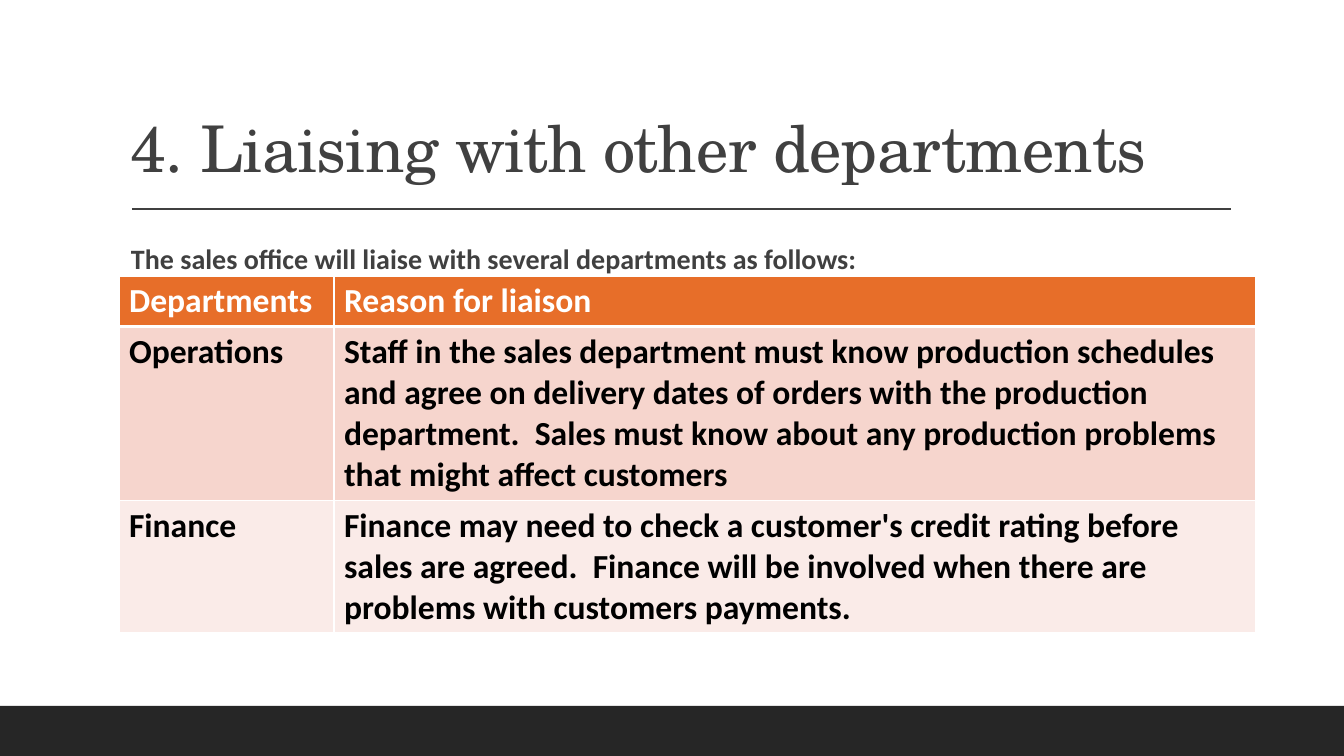
import pptx
import pptx.util
import pptx.dml.color
import pptx.enum.shapes
import pptx.enum.text
import pptx.oxml
import pptx.oxml.ns

FONT = "Calibri"
ROWS = [
    ("Departments", "Reason for liaison"),
    ("Operations", "Staff in the sales department must know production schedules and agree on "
     "delivery dates of orders with the production department.  Sales must know about any "
     "production problems that might affect customers"),
    ("Finance", "Finance may need to check a customer's credit rating before sales are agreed.  "
     "Finance will be involved when there are problems with customers payments."),
]
ROW_HEIGHTS = [50, 174, 132]
ROW_FILLS = ["E76E29", "F6D5CD", "FAEBE8"]
ROW_COLORS = ["FFFFFF", "000000", "000000"]
LABEL_WIDTH = 215


def px(n):
    return pptx.util.Emu(round(n * 914400 / 100.8))


def rgb(value):
    return pptx.dml.color.RGBColor.from_string(value)


def set_font(p, name, size, color, bold=False):
    p.font.name = name
    p.font.size = pptx.util.Pt(size)
    p.font.bold = bold
    p.font.color.rgb = rgb(color)


def add_text(s, box, text):
    tf = s.shapes.add_textbox(*map(px, box)).text_frame
    tf.word_wrap = True
    p = tf.paragraphs[0]
    p.text = text
    return tf, p


def add_footer(s, box):
    sp = s.shapes.add_shape(pptx.enum.shapes.MSO_SHAPE.RECTANGLE, *map(px, box))
    sp.shadow.inherit = False
    sp.fill.solid()
    sp.fill.fore_color.rgb = rgb("262626")
    sp.line.fill.background()


def add_title(s, box, text):
    x, y, w, h = box
    tf, p = add_text(s, box, text)
    tf.vertical_anchor = pptx.enum.text.MSO_ANCHOR.BOTTOM
    p.line_spacing = 0.9
    set_font(p, "TeX Gyre Schola", 46, "404040")
    p.runs[0].font._element.set("spc", "-50")
    rule_y = px(y + h + 18)
    line = s.shapes.add_connector(
        pptx.enum.shapes.MSO_CONNECTOR.STRAIGHT, px(x + 11), rule_y, px(x + w + 1), rule_y)
    line.line.color.rgb = rgb("404040")
    line.line.width = pptx.util.Pt(1)
    line._element.spPr.append(pptx.oxml.parse_xml(
        "<a:effectLst %s/>" % pptx.oxml.ns.nsdecls("a")))


def add_intro(s, box, text):
    tf, p = add_text(s, box, text)
    tf.margin_left = tf.margin_right = 0
    p.line_spacing = 1.1
    set_font(p, FONT, 20, "404040", True)


def set_borders(cell, top, bottom):
    tcPr = cell._tc.get_or_add_tcPr()
    sides = [("L", 1), ("R", 1), ("T", top), ("B", bottom)]
    for i, (side, width) in enumerate(sides):
        tcPr.insert(i, pptx.oxml.parse_xml(
            '<a:ln%s %s w="%d"><a:solidFill><a:srgbClr val="FFFFFF"/></a:solidFill></a:ln%s>'
            % (side, pptx.oxml.ns.nsdecls("a"), pptx.util.Pt(width), side)))


def add_departments(s, box):
    table = s.shapes.add_table(len(ROWS), 2, *map(px, box)).table
    table.columns[0].width = px(LABEL_WIDTH)
    table.columns[1].width = px(box[2] - LABEL_WIDTH)
    for i, texts in enumerate(ROWS):
        table.rows[i].height = px(ROW_HEIGHTS[i])
        for j, text in enumerate(texts):
            cell = table.cell(i, j)
            cell.text = text
            cell.fill.solid()
            cell.fill.fore_color.rgb = rgb(ROW_FILLS[i])
            set_font(cell.text_frame.paragraphs[0], FONT, 24, ROW_COLORS[i], True)
            set_borders(cell, 3 if i == 1 else 1, 3 if i == 0 else 1)


def main():
    prs = pptx.Presentation()
    prs.slide_width, prs.slide_height = px(1344), px(756)
    s = prs.slides.add_slide(prs.slide_layouts[6])
    add_footer(s, (0, 706, 1344, 50))
    add_title(s, (121, 31, 1109, 160), "4. Liaising with other departments")
    add_intro(s, (131, 233, 1099, 414),
              "The sales office will liaise with several departments as follows:")
    add_departments(s, (119, 276, 1137, sum(ROW_HEIGHTS)))
    prs.save("out.pptx")


if __name__ == "__main__":
    main()
